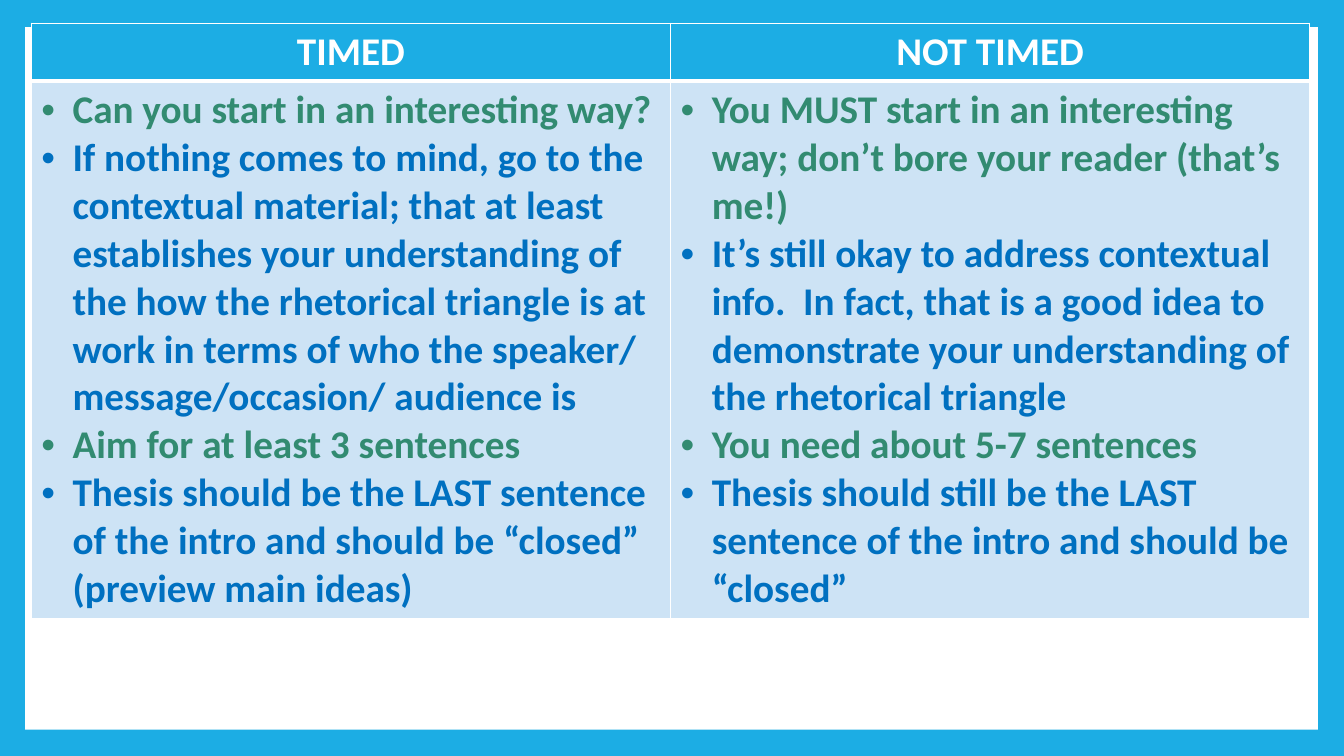
import pptx
import pptx.dml.color
import pptx.enum.shapes
import pptx.enum.text
import pptx.oxml
import pptx.oxml.ns
import pptx.util
from pptx.util import Inches

BLUE, WHITE, PALE = "1CADE4", "FFFFFF", "CDE3F5"
GREEN, DEEP_BLUE = "328B71", "0070C0"

HEADINGS = ["TIMED", "NOT TIMED"]
ADVICE = [
    [
        "Can you start in an interesting way?",
        "If nothing comes to mind, go to the contextual material; that at least "
        "establishes your understanding of the how the rhetorical triangle is at "
        "work in terms of who the speaker/ message/occasion/ audience is",
        "Aim for at least 3 sentences",
        "Thesis should be the LAST sentence of the intro and should be “closed” "
        "(preview main ideas)",
    ],
    [
        "You MUST start in an interesting way; don’t bore your reader (that’s me!)",
        "It’s still okay to address contextual info.  In fact, that is a good idea "
        "to demonstrate your understanding of the rhetorical triangle",
        "You need about 5-7 sentences",
        "Thesis should still be the LAST sentence of the intro and should be “closed”",
    ],
]


def color(value):
    return pptx.dml.color.RGBColor.from_string(value)


class Page:
    font = "Calibri"
    size = pptx.util.Pt(28)
    indent = Inches(0.31)

    def __init__(self, slide, background):
        self.slide = slide
        slide.background.fill.solid()
        slide.background.fill.fore_color.rgb = color(background)

    def panel(self, left, top, width, height, fill):
        panel = self.slide.shapes.add_shape(
            pptx.enum.shapes.MSO_SHAPE.RECTANGLE,
            Inches(left), Inches(top), Inches(width), Inches(height))
        panel.shadow.inherit = False
        panel.fill.solid()
        panel.fill.fore_color.rgb = color(fill)
        panel.line.fill.background()

    def table(self, left, top, column_widths, row_heights):
        table = self.slide.shapes.add_table(
            len(row_heights), len(column_widths), Inches(left), Inches(top),
            Inches(sum(column_widths)), Inches(sum(row_heights))).table
        for column, width in zip(table.columns, column_widths):
            column.width = Inches(width)
        for row, height in zip(table.rows, row_heights):
            row.height = Inches(height)
        return table

    def cell(self, cell, lines, fill, colors, borders, bullets=False):
        cell.fill.solid()
        cell.fill.fore_color.rgb = color(fill)
        self.borders(cell, borders)
        cell.text_frame.text = "\n".join(lines)
        for index, para in enumerate(cell.text_frame.paragraphs):
            if bullets:
                self.bullet(para)
            else:
                para.alignment = pptx.enum.text.PP_ALIGN.CENTER
            for span in para.runs:
                span.font.name = self.font
                span.font.size = self.size
                span.font.bold = True
                span.font.color.rgb = color(colors[index % len(colors)])

    def bullet(self, para):
        properties = para._p.get_or_add_pPr()
        properties.set("marL", str(self.indent))
        properties.set("indent", str(-self.indent))
        namespace = pptx.oxml.ns.nsdecls("a")
        for tag in ('buFont typeface="Arial"', 'buChar char="•"'):
            properties.append(pptx.oxml.parse_xml(f"<a:{tag} {namespace}/>"))

    def borders(self, cell, widths):
        # Border lines must come before the cell's fill
        properties = cell._tc.get_or_add_tcPr()
        for index, (side, width) in enumerate(zip("LRTB", widths)):
            properties.insert(index, pptx.oxml.parse_xml(
                f'<a:ln{side} {pptx.oxml.ns.nsdecls("a")} w="{pptx.util.Pt(width)}">'
                f'<a:solidFill><a:srgbClr val="{WHITE}"/></a:solidFill></a:ln{side}>'))


def main():
    deck = pptx.Presentation()
    deck.slide_width, deck.slide_height = Inches(13.33), Inches(7.5)
    page = Page(deck.slides.add_slide(deck.slide_layouts[6]), BLUE)

    # White panel inside the blue frame
    page.panel(0.25, 0.27, 12.82, 6.97, WHITE)

    # Comparison table, with a thick rule under the headings
    table = page.table(0.31, 0.23, [6.34, 6.34], [0.57, 5.33])
    for column, (heading, advice) in enumerate(zip(HEADINGS, ADVICE)):
        page.cell(table.cell(0, column), [heading], BLUE, [WHITE], (1, 1, 1, 3))
        page.cell(table.cell(1, column), advice, PALE, [GREEN, DEEP_BLUE],
                  (1, 1, 3, 1), bullets=True)

    deck.save("out.pptx")


if __name__ == "__main__":
    main()
